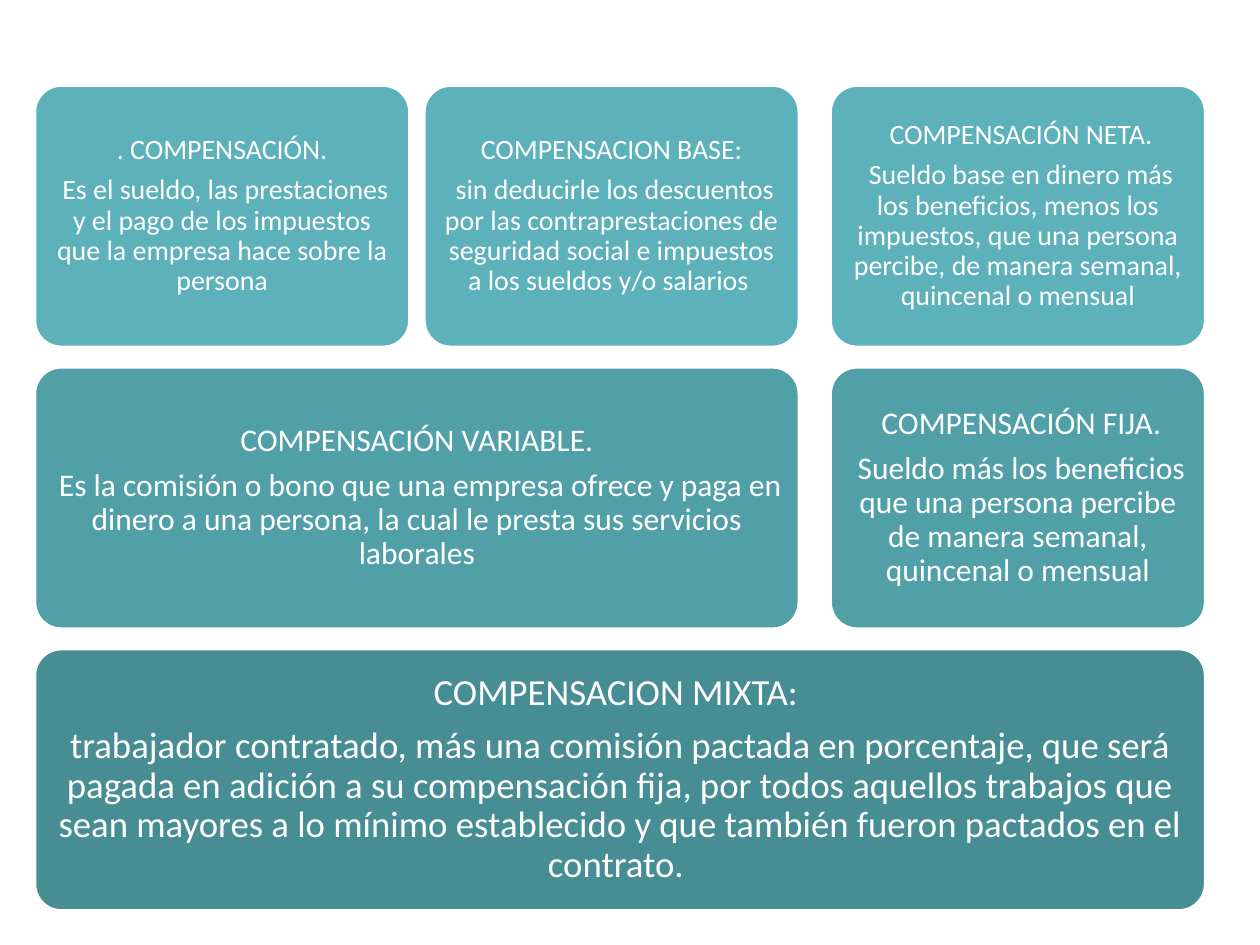
import dataclasses

import pptx
import pptx.dml.color
import pptx.enum.shapes
import pptx.enum.text
import pptx.util

Cm = pptx.util.Cm
Pt = pptx.util.Pt


@dataclasses.dataclass(frozen=True)
class Theme:
    font: str = "Calibri"
    white: str = "FFFFFF"
    fills: tuple = ("5DB1BA", "51A0A8", "478D94")
    sizes: tuple = (16, 18, 21)
    pads: tuple = (0.18, 0.18, 0.23)
    line: float = 1.25


def rgb(code):
    return pptx.dml.color.RGBColor.from_string(code)


def write(para, text, *, font, size, color):
    para.alignment = pptx.enum.text.PP_ALIGN.CENTER
    para.line_spacing = 0.9
    para.space_after = Pt(size * 0.35)
    run = para.add_run()
    run.text = text
    run.font.name = font
    run.font.size = Pt(size)
    run.font.color.rgb = rgb(color)


class Deck:
    """Draws styled elements on the current slide."""

    def __init__(self, theme):
        self.theme = theme
        self.file = pptx.Presentation()
        self.file.slide_width = Cm(25.4)
        self.file.slide_height = Cm(19.05)
        self.slide = self.file.slides.add_slide(self.file.slide_layouts[6])

    def card(self, left, top, width, height, level, texts):
        theme = self.theme
        kind = pptx.enum.shapes.MSO_SHAPE.ROUNDED_RECTANGLE
        box = self.slide.shapes.add_shape(
            kind, Cm(left), Cm(top), Cm(width), Cm(height))
        box.adjustments[0] = 0.1
        box.shadow.inherit = False
        box.fill.solid()
        box.fill.fore_color.rgb = rgb(theme.fills[level])
        box.line.color.rgb = rgb(theme.white)
        box.line.width = Pt(theme.line)
        frame = box.text_frame
        frame.word_wrap = True
        frame.vertical_anchor = pptx.enum.text.MSO_ANCHOR.MIDDLE
        pad = Cm(theme.pads[level])
        frame.margin_left = frame.margin_right = pad
        frame.margin_top = frame.margin_bottom = pad
        for i, text in enumerate(texts):
            para = frame.add_paragraph() if i else frame.paragraphs[0]
            write(para, text, font=theme.font, size=theme.sizes[level],
                  color=theme.white)


LEFTS = (0.71, 8.56, 16.75)
WIDTH, HEIGHT = 7.54, 5.26
TOP, STEP = 1.73, 5.68

CARDS = (
    (2, 0, 2, "COMPENSACION MIXTA: ",
     "trabajador contratado, más una comisión pactada en porcentaje, que será "
     "pagada en adición a su compensación fija, por todos aquellos trabajos "
     "que sean mayores a lo mínimo establecido y que también fueron pactados "
     "en el contrato. "),
    (1, 0, 1, "COMPENSACIÓN VARIABLE.",
     " Es la comisión o bono que una empresa ofrece y paga en dinero a una "
     "persona, la cual le presta sus servicios laborales"),
    (0, 0, 0, ". COMPENSACIÓN.",
     " Es el sueldo, las prestaciones y el pago de los impuestos que la "
     "empresa hace sobre la persona"),
    (0, 1, 1, "COMPENSACION BASE:",
     " sin deducirle los descuentos por las contraprestaciones de seguridad "
     "social e impuestos a los sueldos y/o salarios "),
    (1, 2, 2, " COMPENSACIÓN FIJA.",
     " Sueldo más los beneficios que una persona percibe de manera semanal, "
     "quincenal o mensual"),
    (0, 2, 2, " COMPENSACIÓN NETA.",
     " Sueldo base en dinero más los beneficios, menos los impuestos, que una "
     "persona percibe, de manera semanal, quincenal o mensual"),
)


def main():
    deck = Deck(Theme())
    for row, first, last, *texts in CARDS:
        width = LEFTS[last] + WIDTH - LEFTS[first]
        deck.card(LEFTS[first], TOP + row * STEP, width, HEIGHT, row, texts)
    deck.file.save("out.pptx")


if __name__ == "__main__":
    main()
